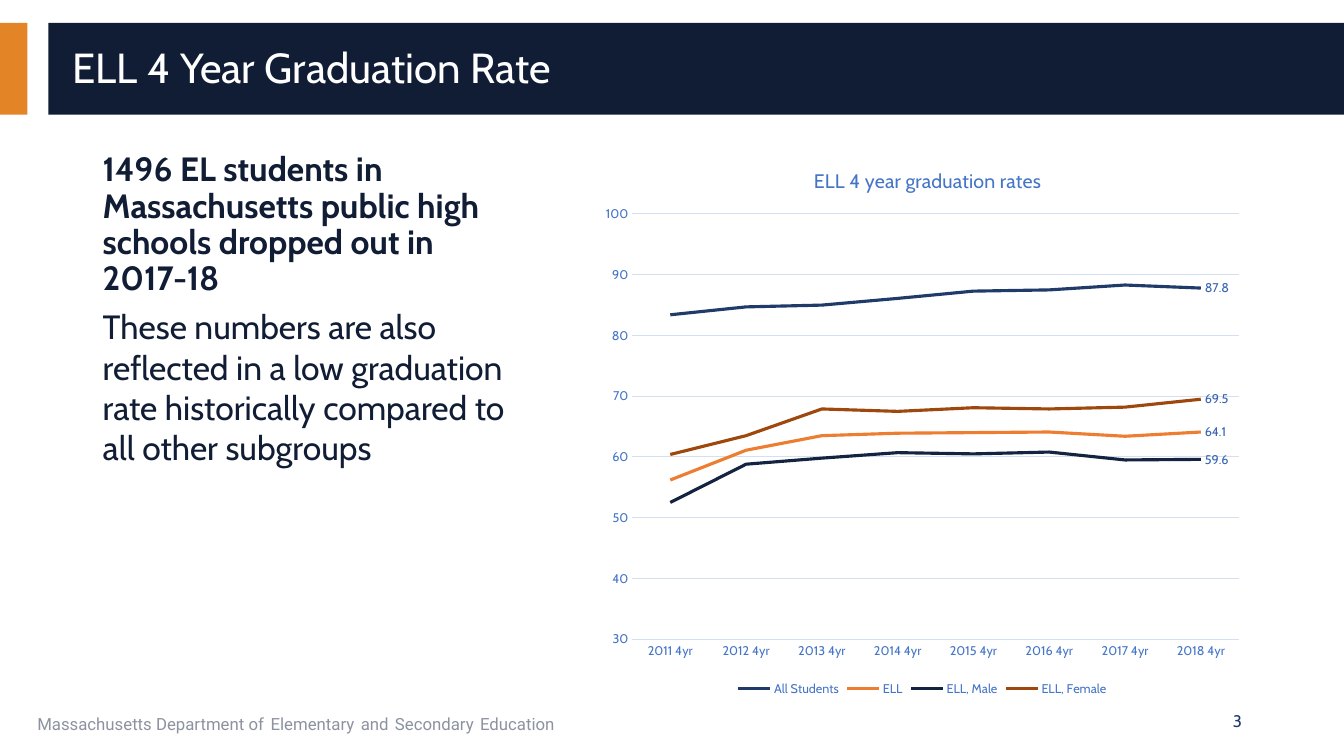
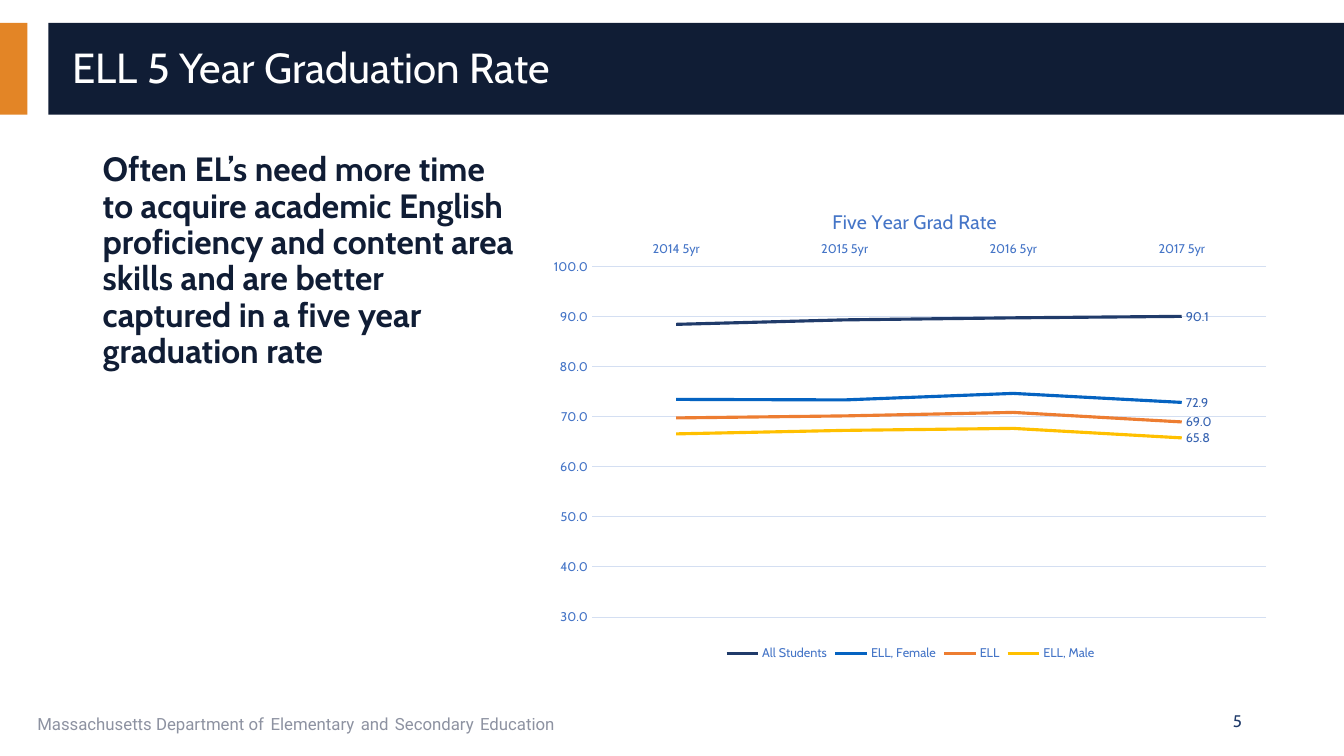
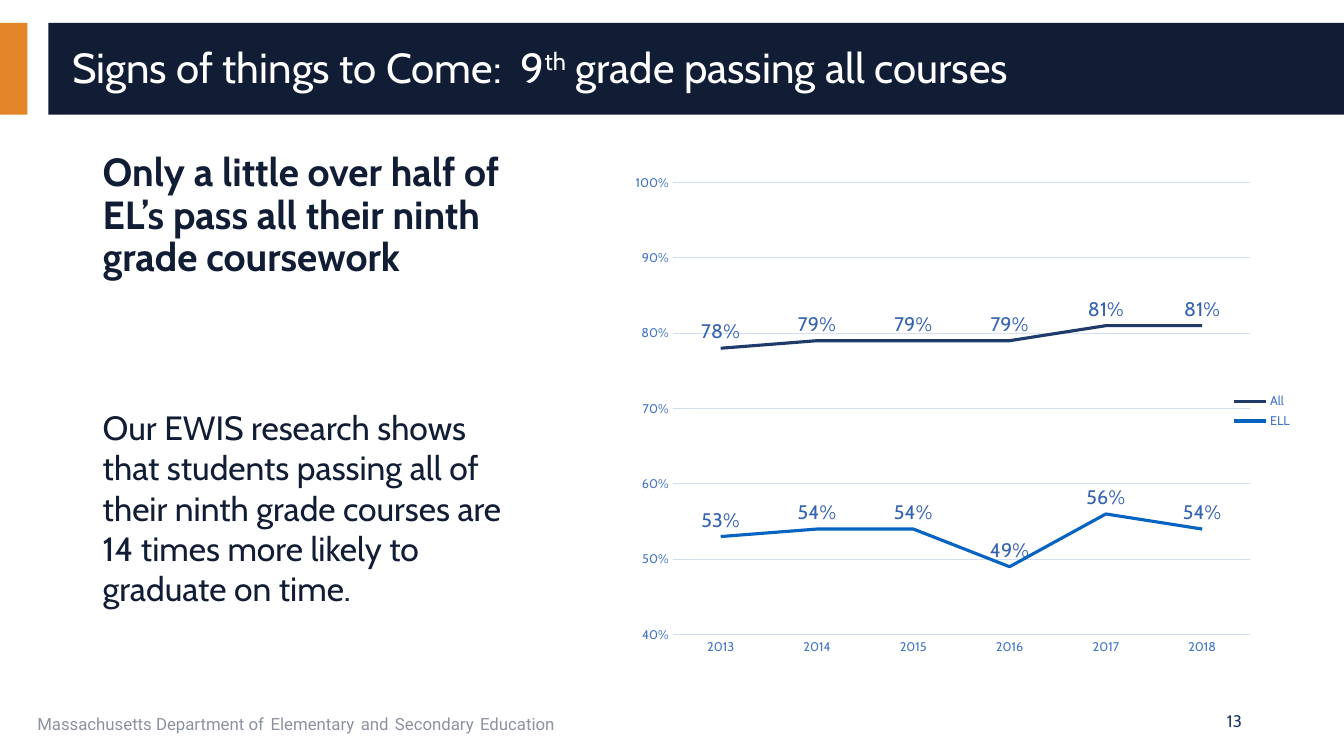
from dataclasses import dataclass

from lxml.etree import SubElement
from pptx import Presentation
from pptx.chart.data import CategoryChartData
from pptx.dml.color import RGBColor
from pptx.enum.chart import (
    XL_CHART_TYPE as ChartType,
    XL_LABEL_POSITION as LabelPos,
    XL_LEGEND_POSITION as LegendPos,
    XL_TICK_LABEL_POSITION as TickLabelPos,
    XL_TICK_MARK as TickMark,
)
from pptx.enum.shapes import MSO_SHAPE as Shape
from pptx.enum.text import MSO_ANCHOR as Anchor, MSO_AUTO_SIZE as AutoSize, PP_ALIGN as Align
from pptx.oxml.ns import qn
from pptx.util import Cm, Pt


@dataclass(frozen=True)
class Theme:
    font: str = "Cabin"
    footer_font: str = "Roboto"
    white: str = "FFFFFF"
    ink: str = "101D35"
    accent: str = "E38526"
    navy: str = "203B6A"
    blue: str = "0563C1"
    orange: str = "ED7D31"
    midnight: str = "132340"
    brown: str = "9E480E"
    gold: str = "FFC000"
    footer_grey: str = "8D92A1"
    axis_text: str = "4575C7"
    label_text: str = "3663B1"
    grid: str = "D4DFF2"
    title: float = 30
    big_heading: float = 28
    body: float = 24
    footer_gap: float = 18
    chart_title: float = 14
    footer: float = 12
    chart: float = 10
    axis: float = 9
    grid_line: float = 0.75
    series_line: float = 2.25


THEME = Theme()

SLIDE_WIDTH, SLIDE_HEIGHT = 33.87, 19.05
BAND_TOP, BAND_HEIGHT = 0.58, 2.31
BAND_LEFT, ACCENT_WIDTH = 1.22, 0.69
TITLE_BOX = (1.57, 0.99, 31.6, 1.52)
HEADING_BOX = (2.34, 3.73, 10.92, 3.48)
FOOTER_BOX = (0.69, 17.65, 21.44, 1.02)
NUMBER_BOX = (23.93, 17.65, 7.62, 1.02)
FOOTER_PARTS = ("Massachusetts Department of", "Elementary", "and", "Secondary", "Education")


def cm_box(box):
    return [Cm(length) for length in box]


def style_font(font, size, color, bold=None, name=THEME.font):
    font.name, font.size, font.bold = name, Pt(size), bold
    font.color.rgb = RGBColor.from_string(color)


def style_line(line, color, width):
    line.color.rgb = RGBColor.from_string(color)
    line.width = Pt(width)


def add_text(slide, box, text, size, color, bold=None, anchor=Anchor.TOP, align=Align.LEFT, spacing=1.0):
    frame = slide.shapes.add_textbox(*cm_box(box)).text_frame
    frame.word_wrap = True
    frame.vertical_anchor = anchor
    paragraph = frame.paragraphs[0]
    paragraph.text = text
    paragraph.alignment, paragraph.line_spacing = align, spacing
    style_font(paragraph.font, size, color, bold)


def add_band(slide, left, width, color):
    band = slide.shapes.add_shape(Shape.RECTANGLE, *cm_box((left, BAND_TOP, width, BAND_HEIGHT)))
    band.shadow.inherit = False
    band.fill.solid()
    band.fill.fore_color.rgb = RGBColor.from_string(color)
    band.line.fill.background()
    return band


def add_footer(slide):
    footer = slide.shapes.add_textbox(*cm_box(FOOTER_BOX))
    footer.text_frame.word_wrap = True
    footer.text_frame.vertical_anchor = Anchor.MIDDLE
    paragraph = footer.text_frame.paragraphs[0]

    def add_part(text, size, color):
        run = paragraph.add_run()
        run.text = text
        style_font(run.font, size, color, name=THEME.footer_font)

    for index, part in enumerate(FOOTER_PARTS):
        if index:
            add_part(" ", THEME.footer_gap, THEME.navy)
        add_part(part, THEME.footer, THEME.footer_grey)
    return footer


def furnish_layout(layout, slide):
    """Draw the bands and footer on a slide, then move them to its layout."""
    for placeholder in list(layout.placeholders)[1:]:
        placeholder.element.getparent().remove(placeholder.element)
    title_band_width = SLIDE_WIDTH - BAND_LEFT
    for part in (
        add_band(slide, 0, ACCENT_WIDTH, THEME.accent),
        add_band(slide, BAND_LEFT, title_band_width, THEME.ink),
        add_footer(slide),
    ):
        layout.shapes.element.append(part.element)


def fill_title(slide, parts):
    """Write the title; every second part is superscript."""
    title = slide.shapes.title
    title.left, title.top, title.width, title.height = cm_box(TITLE_BOX)
    frame = title.text_frame
    frame.word_wrap, frame.auto_size = True, AutoSize.NONE
    frame.vertical_anchor = Anchor.MIDDLE
    paragraph = frame.paragraphs[0]
    paragraph.alignment, paragraph.line_spacing = Align.LEFT, 0.9
    style_font(paragraph.font, THEME.title, THEME.white)
    for index, part in enumerate(parts):
        run = paragraph.add_run()
        run.text = part
        style_font(run.font, THEME.title, THEME.white)
        if index % 2:
            run.font._element.set("baseline", "30000")


def set_layout(parent, position, **settings):
    """Give a chart part a manual layout, as fractions of the chart."""
    for old in parent.findall(qn("c:layout")):
        parent.remove(old)
    layout = SubElement(parent, qn("c:layout"))
    parent.insert(position, layout)
    manual = SubElement(layout, qn("c:manualLayout"))
    for tag, value in settings.items():
        SubElement(manual, qn(f"c:{tag}")).set("val", str(value))


def style_axes(chart, low, high, step, number_format, categories_on_top):
    categories, values = chart.category_axis, chart.value_axis
    for axis in (categories, values):
        axis.major_tick_mark = axis.minor_tick_mark = TickMark.NONE
        style_font(axis.tick_labels.font, THEME.axis, THEME.axis_text)
    style_line(categories.format.line, THEME.grid, THEME.grid_line)
    if categories_on_top:
        categories.tick_label_position = TickLabelPos.HIGH
    values.minimum_scale, values.maximum_scale, values.major_unit = low, high, step
    values.tick_labels.number_format = number_format
    values.tick_labels.number_format_is_linked = False
    values.format.line.fill.background()
    style_line(values.major_gridlines.format.line, THEME.grid, THEME.grid_line)


def label_series(series, every_point):
    labels = series.data_labels
    labels.show_value = every_point
    if every_point:
        labels.position = LabelPos.ABOVE
        style_font(labels.font, THEME.chart_title, THEME.label_text)
    else:
        last = series.points[len(series.values) - 1].data_label
        style_font(last.font, THEME.axis, THEME.label_text)
        last.position = LabelPos.RIGHT


def add_rate_chart(slide, box, categories, rates, plot, scale, axis_format, value_format="0.0",
                   title=None, title_at=None, legend=LegendPos.BOTTOM,
                   label_every_point=False, categories_on_top=False):
    """Add a line chart; rates holds (name, colour, values) for each line."""
    data = CategoryChartData(number_format=value_format)
    data.categories = categories
    for name, _, values in rates:
        data.add_series(name, values)
    chart = slide.shapes.add_chart(ChartType.LINE, *cm_box(box), data).chart
    style_font(chart.font, THEME.chart, THEME.navy)
    chart.plots[0].vary_by_categories = False

    chart.has_title = title is not None
    if title:
        heading = chart.chart_title.text_frame.paragraphs[0]
        run = heading.add_run()
        run.text = title
        style_font(run.font, THEME.chart_title, THEME.axis_text, bold=False)
        x, y = title_at
        set_layout(chart.chart_title.element, 1, xMode="edge", yMode="edge", x=x, y=y)

    chart.has_legend = True
    chart.legend.position = legend
    chart.legend.include_in_layout = False
    style_font(chart.legend.font, THEME.axis, THEME.axis_text)

    style_axes(chart, *scale, axis_format, categories_on_top)
    for series, (_, color, _) in zip(chart.plots[0].series, rates):
        series.smooth = False
        style_line(series.format.line, color, THEME.series_line)
        label_series(series, label_every_point)

    x, y, width, height = plot
    plot_area = chart.element.find(".//" + qn("c:plotArea"))
    set_layout(plot_area, 0, layoutTarget="inner", xMode="edge", yMode="edge",
               x=x, y=y, w=width, h=height)


def add_rate_slide(slide, number, title, heading, chart, heading_size=THEME.body, body=None, body_box=None):
    fill_title(slide, title)
    add_text(slide, HEADING_BOX, heading, heading_size, THEME.ink, bold=True, spacing=0.9)
    if body:
        add_text(slide, body_box, body, THEME.body, THEME.ink)
    add_rate_chart(slide, **chart)
    add_text(slide, NUMBER_BOX, str(number), THEME.footer, THEME.navy,
             anchor=Anchor.MIDDLE, align=Align.RIGHT)


FOUR_YEAR = dict(
    number=3,
    title=["ELL 4 Year Graduation Rate"],
    heading="1496 EL students in Massachusetts public high schools dropped out in 2017-18",
    body="These numbers are also reflected in a low graduation rate historically compared to all other subgroups",
    body_box=(2.34, 7.59, 10.92, 8.69),
    chart=dict(
        box=(14.94, 3.56, 16.61, 14.1),
        title="ELL 4 year graduation rates",
        title_at=(0.33, 0.04),
        plot=(0.06, 0.13, 0.92, 0.76),
        scale=(30, 100, 10),
        axis_format="#,##0",
        categories=[f"{year} 4yr" for year in range(2011, 2019)],
        rates=[
            ("All Students", THEME.navy, (83.4, 84.7, 85, 86.1, 87.3, 87.5, 88.3, 87.8)),
            ("ELL", THEME.orange, (56.2, 61.1, 63.5, 63.9, 64, 64.1, 63.4, 64.1)),
            ("ELL, Male", THEME.midnight, (52.5, 58.8, 59.8, 60.7, 60.5, 60.8, 59.5, 59.6)),
            ("ELL, Female", THEME.brown, (60.4, 63.5, 67.9, 67.5, 68.1, 67.9, 68.2, 69.5)),
        ],
    ),
)

FIVE_YEAR = dict(
    number=5,
    title=["ELL 5 Year Graduation Rate"],
    heading="Often EL’s need more time to acquire academic English proficiency and content area skills "
            "and are better captured in a five year graduation rate",
    chart=dict(
        box=(13.61, 4.67, 18.67, 12.09),
        title="Five Year Grad Rate",
        title_at=(0.39, 0.04),
        plot=(0.07, 0.17, 0.91, 0.73),
        scale=(30, 100, 10),
        axis_format="0.0",
        categories_on_top=True,
        categories=[f"{year} 5yr" for year in range(2014, 2018)],
        rates=[
            ("All Students", THEME.navy, (88.5, 89.4, 89.8, 90.1)),
            ("ELL, Female", THEME.blue, (73.5, 73.4, 74.7, 72.9)),
            ("ELL", THEME.orange, (69.8, 70.2, 70.9, 69)),
            ("ELL, Male", THEME.gold, (66.6, 67.3, 67.7, 65.8)),
        ],
    ),
)

NINTH_GRADE = dict(
    number=13,
    title=["Signs of things to Come:  9", "th", " grade passing all courses"],
    heading="Only a little over half of EL’s pass all their ninth grade coursework",
    heading_size=THEME.big_heading,
    body="Our EWIS research shows that students passing all of their ninth grade courses "
         "are 14 times more likely to graduate on time.",
    body_box=(2.34, 10.13, 10.92, 6.17),
    chart=dict(
        box=(14.15, 3.96, 18.67, 12.8),
        plot=(0.15, 0.05, 0.78, 0.89),
        scale=(0.4, 1, 0.1),
        axis_format="0%",
        value_format="0%",
        legend=LegendPos.RIGHT,
        label_every_point=True,
        categories=[str(year) for year in range(2013, 2019)],
        rates=[
            ("All", THEME.navy, (0.78, 0.79, 0.79, 0.79, 0.81, 0.81)),
            ("ELL", THEME.blue, (0.53, 0.54, 0.54, 0.49, 0.56, 0.54)),
        ],
    ),
)


def main():
    deck = Presentation()
    deck.slide_width, deck.slide_height = Cm(SLIDE_WIDTH), Cm(SLIDE_HEIGHT)
    title_only = deck.slide_layouts[5]
    for index, content in enumerate((FOUR_YEAR, FIVE_YEAR, NINTH_GRADE)):
        slide = deck.slides.add_slide(title_only)
        if index == 0:
            furnish_layout(title_only, slide)
        add_rate_slide(slide, **content)
    deck.save("out.pptx")


if __name__ == "__main__":
    main()
